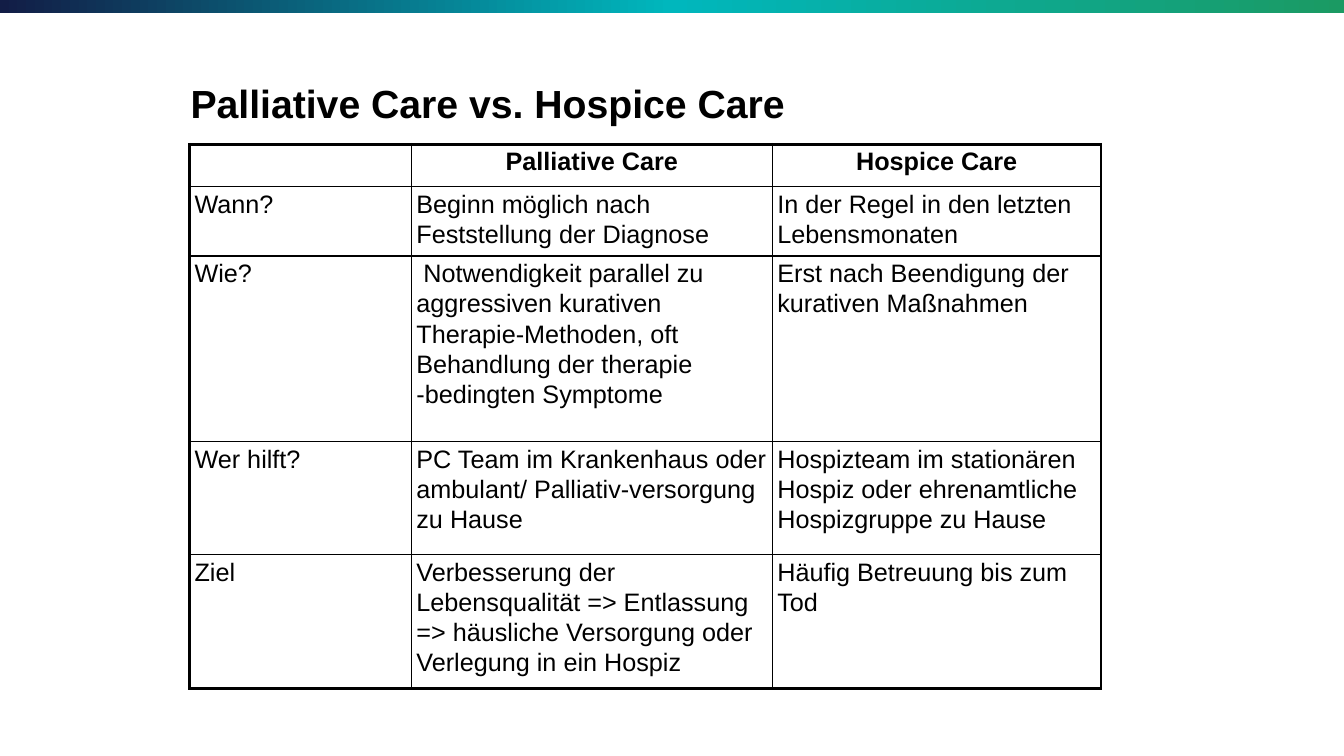
import copy
import lxml.etree
import pptx
import pptx.dml.color
import pptx.enum.shapes
import pptx.enum.text
import pptx.oxml.ns
import pptx.util

Inches, Pt = pptx.util.Inches, pptx.util.Pt
RGB = pptx.dml.color.RGBColor.from_string
qn = pptx.oxml.ns.qn
ALIGN = pptx.enum.text.PP_ALIGN

THEME = {
    "font": "Arial",
    "ink": "000000",
    "bar": [(0, "121D46"), (0.5, "00B7BD"), (1, "1B9A63")],
    "title_size": 28,
    "table_size": 18,
    "frame_line": 2.25,
    "grid_line": 1,
}


def write(frame, text, size, bold=False, align=ALIGN.LEFT, spacing=None, after=0):
    paragraph = frame.paragraphs[0]
    paragraph.alignment = align
    paragraph.line_spacing = spacing
    paragraph.space_before = Pt(0)
    paragraph.space_after = Pt(after)
    run = paragraph.add_run()
    run.text = text
    run.font.name = THEME["font"]
    run.font.size = Pt(size)
    run.font.bold = bold
    run.font.color.rgb = RGB(THEME["ink"])


def draw_border(cell, side, width):
    line = lxml.etree.SubElement(
        cell._tc.get_or_add_tcPr(), qn(f"a:ln{side}"), w=str(Pt(width)))
    fill = lxml.etree.SubElement(line, qn("a:solidFill"))
    lxml.etree.SubElement(fill, qn("a:srgbClr"), val=THEME["ink"])


deck = pptx.Presentation()
deck.slide_width, deck.slide_height = Inches(13.33), Inches(7.5)
slide = deck.slides.add_slide(deck.slide_layouts[5])

# Title
title = slide.shapes.title
title.left, title.top = Inches(1.03), Inches(0.69)
title.width, title.height = Inches(9.66), Inches(1.01)
heading = title.text_frame
heading.word_wrap = True
heading.auto_size = pptx.enum.text.MSO_AUTO_SIZE.NONE
heading.vertical_anchor = pptx.enum.text.MSO_ANCHOR.TOP
heading.margin_left, heading.margin_top = Inches(0.86), Inches(0.1)
heading.margin_right = heading.margin_bottom = Inches(0.05)
write(heading, "Palliative Care vs. Hospice Care", size=THEME["title_size"], bold=True)

# Gradient bar along the top edge
bar = slide.shapes.add_shape(
    pptx.enum.shapes.MSO_SHAPE.RECTANGLE, 0, 0, deck.slide_width, Inches(0.13))
bar.shadow.inherit = False
bar.line.fill.background()
bar.fill.gradient()
bar.fill.gradient_angle = 0
stop_list = bar._element.spPr.find(qn("a:gradFill")).find(qn("a:gsLst"))
stop_list.append(copy.deepcopy(stop_list[-1]))
for stop, (position, colour) in zip(bar.fill.gradient_stops, THEME["bar"]):
    stop.position = position
    stop.color.rgb = RGB(colour)

# Comparison table
comparison = [
    ("", "Palliative Care", "Hospice Care"),
    ("Wann?", "Beginn möglich nach Feststellung der Diagnose",
     "In der Regel in den letzten Lebensmonaten"),
    ("Wie?", " Notwendigkeit parallel zu aggressiven kurativen Therapie-Methoden, "
     "oft Behandlung der therapie -bedingten Symptome",
     "Erst nach Beendigung der kurativen Maßnahmen"),
    ("Wer hilft?", "PC Team im Krankenhaus oder ambulant/ Palliativ-versorgung zu Hause",
     "Hospizteam im stationären Hospiz oder ehrenamtliche Hospizgruppe zu Hause"),
    ("Ziel", "Verbesserung der Lebensqualität => Entlassung => häusliche Versorgung "
     "oder Verlegung in ein Hospiz", "Häufig Betreuung bis zum Tod"),
]
column_widths = [2.2, 3.58, 3.26]
row_heights = [0.42, 0.69, 1.84, 1.12, 1.33]
last_row, last_column = len(row_heights) - 1, len(column_widths) - 1

table = slide.shapes.add_table(
    len(row_heights), len(column_widths), Inches(1.88), Inches(1.43),
    Inches(sum(column_widths)), Inches(sum(row_heights))).table
table.first_row = table.horz_banding = False
for column, width in zip(table.columns, column_widths):
    column.width = Inches(width)
for row, height in zip(table.rows, row_heights):
    row.height = Inches(height)

for r, entries in enumerate(comparison):
    for c, entry in enumerate(entries):
        cell = table.cell(r, c)
        cell.margin_left = cell.margin_right = Inches(0.05)
        cell.margin_top = cell.margin_bottom = Inches(0.02)
        # Heavy outer frame, thin inner grid
        outer = {"L": c == 0, "R": c == last_column, "T": r == 0, "B": r == last_row}
        for side, on_frame in outer.items():
            draw_border(cell, side, THEME["frame_line" if on_frame else "grid_line"])
        cell.fill.background()
        if entry:
            write(cell.text_frame, entry, size=THEME["table_size"], bold=r == 0,
                  align=ALIGN.CENTER if r == 0 else ALIGN.LEFT, spacing=1.07, after=8)

deck.save("out.pptx")
